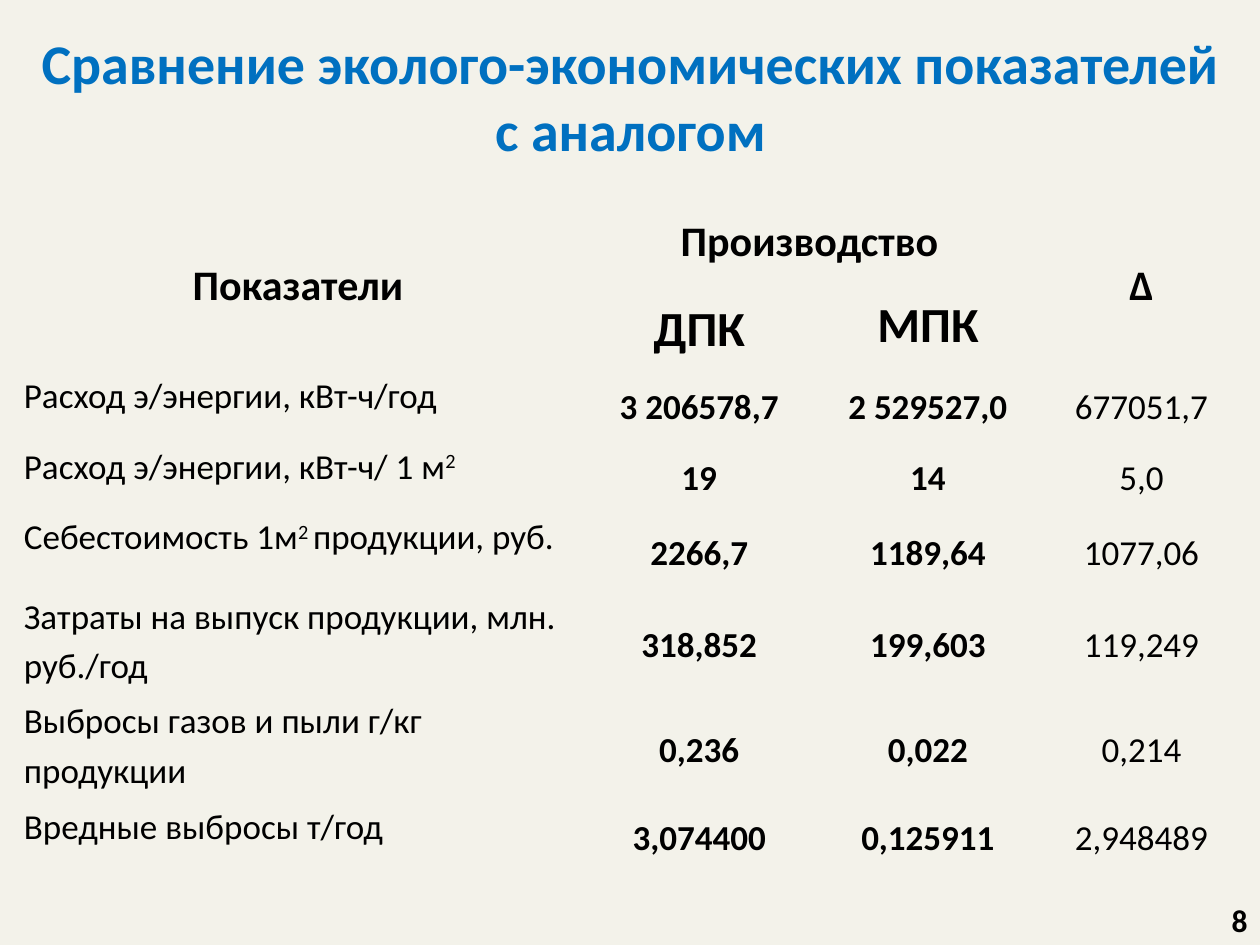
from pptx import Presentation
from pptx.dml.color import RGBColor
from pptx.enum.text import MSO_ANCHOR, PP_ALIGN
from pptx.util import Inches, Pt

BACKGROUND = RGBColor(0xF3, 0xF2, 0xEA)
BLUE = RGBColor(0x00, 0x70, 0xC0)
BLACK = RGBColor(0x00, 0x00, 0x00)
FONT = "Calibri"
NO_GRID_STYLE = "{2D5ABB26-0587-4C30-8999-92F81FD0307C}"

TITLE = "Сравнение эколого-экономических показателей с аналогом"
PAGE_NUMBER = "8"

# Header cells: row, column, rows spanned, columns spanned, text, size, line spacing
HEADERS = [
    (0, 0, 2, 1, "Показатели", 24, 1.15),
    (0, 1, 1, 2, "Производство", 24, 1.15),
    (0, 3, 2, 1, "∆", 24, 1.15),
    (1, 1, 1, 1, "ДПК", 28, 1.15),
    (1, 2, 1, 1, "МПК", 28, None),
]
# Indicator name (a "^" on either side of a superscript), then the three values
INDICATORS = [
    ("Расход э/энергии, кВт-ч/год", "3 206578,7", "2 529527,0", "677051,7"),
    ("Расход э/энергии, кВт-ч/ 1 м^2", "19", "14", "5,0"),
    ("Себестоимость 1м^2 ^продукции, руб.", "2266,7", "1189,64", "1077,06"),
    ("Затраты на выпуск продукции, млн. руб./год", "318,852", "199,603", "119,249"),
    ("Выбросы газов и пыли г/кг продукции", "0,236", "0,022", "0,214"),
    ("Вредные выбросы т/год", "3,074400", "0,125911", "2,948489"),
]
COLUMN_WIDTHS = [4.49, 1.88, 1.75, 1.64]
ROW_HEIGHTS = [0.69, 0.69, 0.56, 0.56, 0.63, 0.83, 0.84, 0.56]


def write(frame, content, size, bold=True, color=BLACK, align=PP_ALIGN.CENTER, spacing=None):
    para = frame.paragraphs[0]
    para.alignment = align
    if spacing:
        para.line_spacing = spacing
    for index, part in enumerate(content.split("^")):
        span = para.add_run()
        span.text = part
        span.font.name = FONT
        span.font.size = Pt(size)
        span.font.bold = bold
        span.font.color.rgb = color
        if index % 2:
            span.font._element.set("baseline", "30000")


def add_text(page, place, content, size, **style):
    box = page.shapes.add_textbox(*map(Inches, place))
    box.text_frame.word_wrap = True
    box.text_frame.vertical_anchor = MSO_ANCHOR.MIDDLE
    write(box.text_frame, content, size, **style)


def add_indicator_table(page):
    frame = page.shapes.add_table(
        len(ROW_HEIGHTS), len(COLUMN_WIDTHS), Inches(0.12), Inches(1.55),
        Inches(sum(COLUMN_WIDTHS)), Inches(sum(ROW_HEIGHTS)))
    table = frame.table
    table.first_row = table.horz_banding = False
    table._tbl.tblPr[0].text = NO_GRID_STYLE
    for column, width in zip(table.columns, COLUMN_WIDTHS):
        column.width = Inches(width)
    for row, height in zip(table.rows, ROW_HEIGHTS):
        row.height = Inches(height)
    for cell in table.iter_cells():
        cell.fill.background()
        cell.margin_left = cell.margin_right = Inches(0.07)
        cell.margin_top = cell.margin_bottom = 0
        cell.vertical_anchor = MSO_ANCHOR.MIDDLE

    # Header rows
    for row, column, tall, wide, content, size, spacing in HEADERS:
        cell = table.cell(row, column)
        if tall * wide > 1:
            cell.merge(table.cell(row + tall - 1, column + wide - 1))
        write(cell.text_frame, content, size, spacing=spacing)

    # Indicator rows: names at top left, values centred, the two products bold
    for row, values in enumerate(INDICATORS, start=2):
        for column, content in enumerate(values):
            cell = table.cell(row, column)
            if column == 0:
                cell.vertical_anchor = MSO_ANCHOR.TOP
            write(cell.text_frame, content, 20, bold=column in (1, 2), spacing=1.15,
                  align=PP_ALIGN.CENTER if column else PP_ALIGN.LEFT)


def main():
    deck = Presentation()
    deck.slide_width, deck.slide_height = Inches(10), Inches(7.5)
    page = deck.slides.add_slide(deck.slide_layouts[6])
    page.background.fill.solid()
    page.background.fill.fore_color.rgb = BACKGROUND

    add_text(page, (0.2, 0.13, 9.61, 1.26), TITLE, 32, color=BLUE)
    add_indicator_table(page)
    add_text(page, (7.67, 7.1, 2.33, 0.4), PAGE_NUMBER, 18, align=PP_ALIGN.RIGHT)
    deck.save("out.pptx")


if __name__ == "__main__":
    main()
